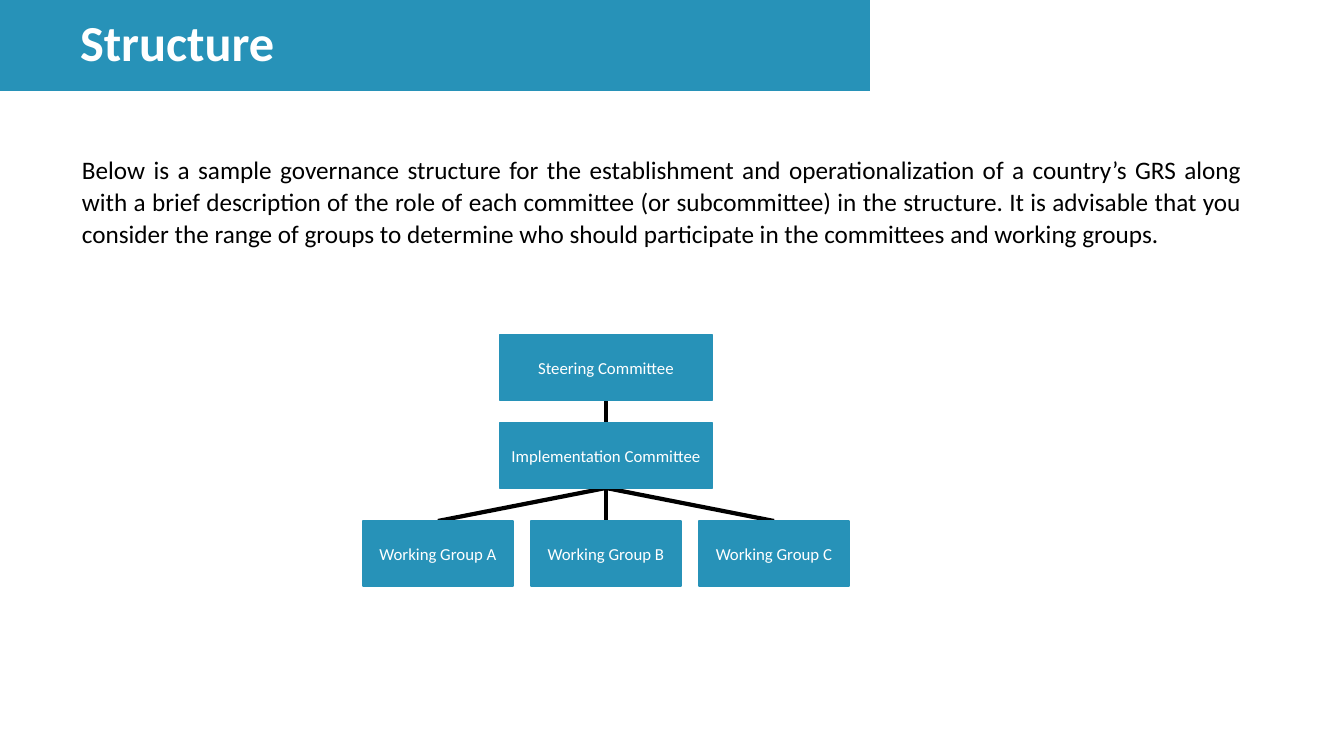
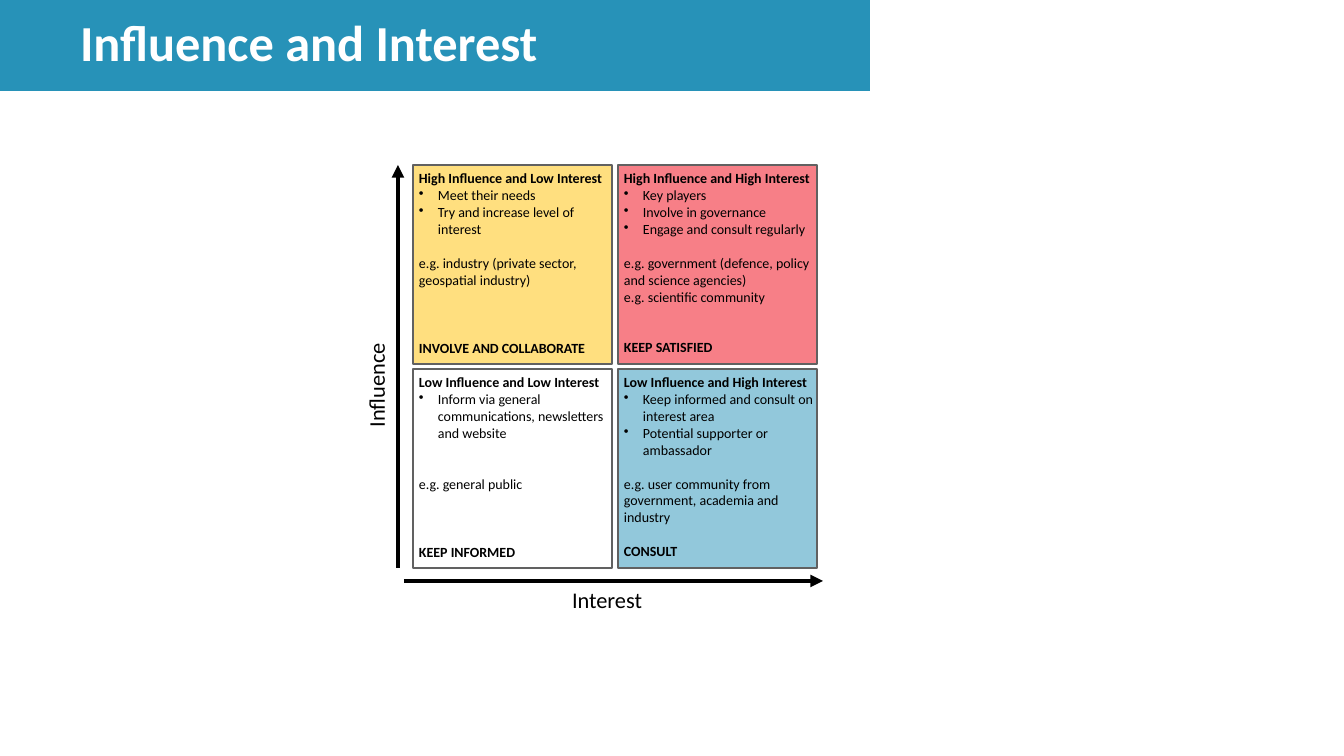
from dataclasses import dataclass

from lxml import etree
from pptx import Presentation
from pptx.dml.color import RGBColor
from pptx.enum.shapes import MSO_CONNECTOR, MSO_SHAPE
from pptx.enum.text import MSO_ANCHOR, MSO_AUTO_SIZE, PP_ALIGN
from pptx.oxml.ns import qn
from pptx.util import Pt

RECT, STRAIGHT = MSO_SHAPE.RECTANGLE, MSO_CONNECTOR.STRAIGHT
TOP, MIDDLE = MSO_ANCHOR.TOP, MSO_ANCHOR.MIDDLE
LEFT, CENTER, JUSTIFY = PP_ALIGN.LEFT, PP_ALIGN.CENTER, PP_ALIGN.JUSTIFY
NO_FIT = MSO_AUTO_SIZE.NONE
TITLE_ONLY = 5
SITE_TOP, SITE_BOTTOM = 0, 2
SLIDE_W, SLIDE_H = 1344, 756
EMU_W = 12192000


@dataclass(frozen=True)
class Theme:
    """Colours, font and type sizes shared by the slides."""

    font: str = "Calibri"
    brand: str = "2792B8"
    amber: str = "FFC000"
    red: str = "F00010"
    white: str = "FFFFFF"
    black: str = "000000"
    border: str = "616161"
    title: int = 36
    body: int = 18
    axis: int = 16
    node: int = 12
    note: int = 10
    note_line: float = 12.2


T = Theme()

INTRO = (
    "Below is a sample governance structure for the establishment and "
    "operationalization of a country’s GRS along with a brief description of "
    "the role of each committee (or subcommittee) in the structure. It is "
    "advisable that you consider the range of groups to determine who should "
    "participate in the committees and working groups."
)
GROUPS = ["Working Group A", "Working Group B", "Working Group C"]


@dataclass(frozen=True)
class Quadrant:
    """One cell of the matrix; gaps are counted in lines of text."""

    col: int
    row: int
    fill: str
    alpha: int
    heading: str
    bullets: list
    examples_gap: int
    examples: list
    strategy_gap: int
    strategy: str


QUADRANTS = [
    Quadrant(0, 0, T.amber, 50, "High Influence and Low Interest",
             ["Meet their needs", "Try and increase level of interest"],
             1, ["e.g. industry (private sector, geospatial industry)"],
             3, "INVOLVE AND COLLABORATE"),
    Quadrant(1, 0, T.red, 50, "High Influence and High Interest",
             ["Key players", "Involve in governance",
              "Engage and consult regularly"],
             1, ["e.g. government (defence, policy and science agencies)",
                 "e.g. scientific community"],
             2, "KEEP SATISFIED"),
    Quadrant(0, 1, T.white, 100, "Low Influence and Low Interest",
             ["Inform via general communications, newsletters and website"],
             2, ["e.g. general public"],
             3, "KEEP INFORMED"),
    Quadrant(1, 1, T.brand, 50, "Low Influence and High Interest",
             ["Keep informed and consult on interest area",
              "Potential supporter or ambassador"],
             1, ["e.g. user community from government, academia and industry"],
             1, "CONSULT"),
]


def px(n):
    """Turn px into EMU."""
    return round(n * EMU_W / SLIDE_W)


def rgb(color):
    """Turn a hex string into a colour."""
    return RGBColor.from_string(color)


def set_frame(tf, anchor=TOP, insets=(10, 5, 10, 5)):
    """Set wrapping, anchor and insets of a text frame."""
    tf.word_wrap = True
    tf.auto_size = NO_FIT
    tf.vertical_anchor = anchor
    tf.margin_left, tf.margin_top, tf.margin_right, tf.margin_bottom = map(px, insets)


def add_run(p, text, size, color=T.black, bold=False):
    """Add one formatted run to a paragraph."""
    r = p.add_run()
    r.text = text
    r.font.name = T.font
    r.font.size = Pt(size)
    r.font.bold = bold
    r.font.color.rgb = rgb(color)


def add_bullet(p, indent):
    """Give a paragraph a hanging bullet."""
    pPr = p._p.get_or_add_pPr()
    pPr.set("marL", str(px(indent)))
    pPr.set("indent", str(-px(indent)))
    etree.SubElement(pPr, qn("a:buChar")).set("char", "•")


def add_rect(s, box, fill, line, alpha=100):
    """Add a filled and outlined rectangle."""
    sp = s.shapes.add_shape(RECT, *map(px, box))
    sp.shadow.inherit = False
    sp.fill.solid()
    sp.fill.fore_color.rgb = rgb(fill)
    if alpha < 100:
        clr = sp.element.spPr.find(qn("a:solidFill"))[0]
        etree.SubElement(clr, qn("a:alpha")).set("val", str(alpha * 1000))
    sp.line.color.rgb = rgb(line)
    sp.line.width = Pt(1)
    return sp


def add_line(s, start, end, arrow=False):
    """Add a straight black line, with an arrowhead if asked for."""
    c = s.shapes.add_connector(STRAIGHT, *map(px, (*start, *end)))
    c.line.color.rgb = rgb(T.black)
    c.line.width = Pt(3)
    if arrow:
        ln = c.line._get_or_add_ln()
        etree.SubElement(ln, qn("a:tailEnd")).set("type", "triangle")
    etree.SubElement(c.element.spPr, qn("a:effectLst"))
    return c


def add_text(s, box, text, size, align=LEFT, spacing=1.0):
    """Add a text box of one paragraph."""
    sp = s.shapes.add_textbox(*map(px, box))
    set_frame(sp.text_frame)
    p = sp.text_frame.paragraphs[0]
    p.alignment = align
    p.line_spacing = spacing
    add_run(p, text, size)
    return sp


def add_titled_slide(prs, title):
    """Add a slide whose title fills the band at the top left."""
    s = prs.slides.add_slide(prs.slide_layouts[TITLE_ONLY])
    sp = s.shapes.title
    sp.left, sp.top, sp.width, sp.height = map(px, (0, 0, 870, 91))
    sp.fill.solid()
    sp.fill.fore_color.rgb = rgb(T.brand)
    set_frame(sp.text_frame, MIDDLE, (80, 5, 10, 5))
    p = sp.text_frame.paragraphs[0]
    p.alignment = LEFT
    p.line_spacing = 0.9
    add_run(p, title, T.title, T.white, True)
    return s


def add_node(s, box, text):
    """Add one box of the organisation chart."""
    sp = add_rect(s, box, T.brand, T.brand)
    set_frame(sp.text_frame, MIDDLE)
    p = sp.text_frame.paragraphs[0]
    p.alignment = CENTER
    add_run(p, text, T.node, T.white)
    return sp


def link_nodes(s, parent, child):
    """Join two nodes by a line that lies behind them."""
    c = add_line(s, (0, 0), (0, 0))
    c.begin_connect(parent, SITE_BOTTOM)
    c.end_connect(child, SITE_TOP)
    c.element.getparent().insert(2, c.element)


def add_org_chart(s, box):
    """Draw two committees above a row of working groups."""
    x, y, w, h = box
    node_h, committee_w, group_w = 65, 213, 150
    committee_x = x + (w - committee_w) / 2
    steering = add_node(s, (committee_x, y, committee_w, node_h), "Steering Committee")
    implementation = add_node(
        s, (committee_x, y + 88, committee_w, node_h), "Implementation Committee")
    link_nodes(s, steering, implementation)
    pitch = (w - group_w) / (len(GROUPS) - 1)
    for i, name in enumerate(GROUPS):
        group = add_node(s, (x + i * pitch, y + h - node_h, group_w, node_h), name)
        link_nodes(s, implementation, group)


def add_quadrant(s, box, q):
    """Draw one quadrant with its heading, bullets, examples and strategy."""
    sp = add_rect(s, box, q.fill, T.border, q.alpha)
    tf = sp.text_frame
    set_frame(tf, TOP, (6, 5, 3, 0))
    rows = [(q.heading, 0, True, False)]
    rows += [(text, 0, False, True) for text in q.bullets]
    rows += [(text, 0 if i else q.examples_gap, False, False)
             for i, text in enumerate(q.examples)]
    rows.append((q.strategy, q.strategy_gap, True, False))
    for i, (text, gap, bold, bulleted) in enumerate(rows):
        p = tf.add_paragraph() if i else tf.paragraphs[0]
        p.alignment = LEFT
        if gap:
            p.space_before = Pt(gap * T.note_line)
        if bulleted:
            add_bullet(p, 19)
        add_run(p, text, T.note, bold=bold)


def add_matrix(s, box):
    """Draw the four quadrants with an arrow and a label for each axis."""
    x, y, w, h = box
    gap_x, gap_y = 6, 5
    cell_w, cell_h = (w - gap_x) / 2, (h - gap_y) / 2
    for q in QUADRANTS:
        left = x + q.col * (cell_w + gap_x)
        top = y + q.row * (cell_h + gap_y)
        add_quadrant(s, (left, top, cell_w, cell_h), q)
    add_line(s, (x - 15, y + h), (x - 15, y), arrow=True)
    add_line(s, (x - 9, y + h + 13), (x + w + 6, y + h + 13), arrow=True)
    influence = add_text(s, (x - 92, y + 196, 113, 40), "Influence", T.axis)
    influence.rotation = 270
    add_text(s, (x + 149, y + h + 13, 99, 40), "Interest", T.axis)


def build_structure(prs):
    """Build the slide on the governance structure."""
    s = add_titled_slide(prs, "Structure")
    add_text(s, (72, 147, 1180, 120), INTRO, T.body, JUSTIFY, 1.07)
    add_org_chart(s, (363, 335, 486, 251))


def build_influence(prs):
    """Build the slide on influence and interest."""
    s = add_titled_slide(prs, "Influence and Interest")
    add_matrix(s, (413, 165, 404, 403))


def main():
    """Build and save the presentation."""
    prs = Presentation()
    prs.slide_width, prs.slide_height = px(SLIDE_W), px(SLIDE_H)
    build_structure(prs)
    build_influence(prs)
    prs.save("out.pptx")


if __name__ == "__main__":
    main()
